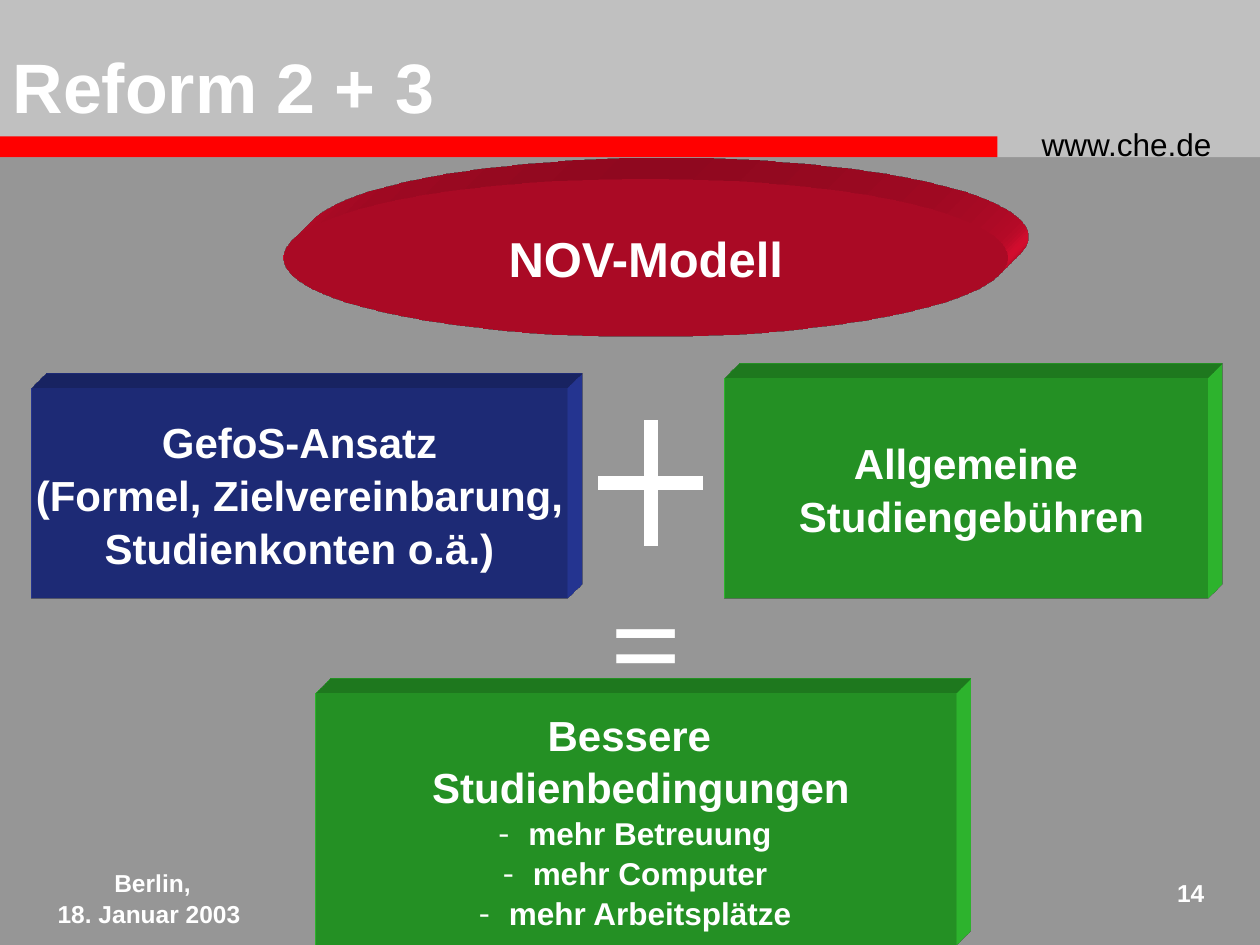
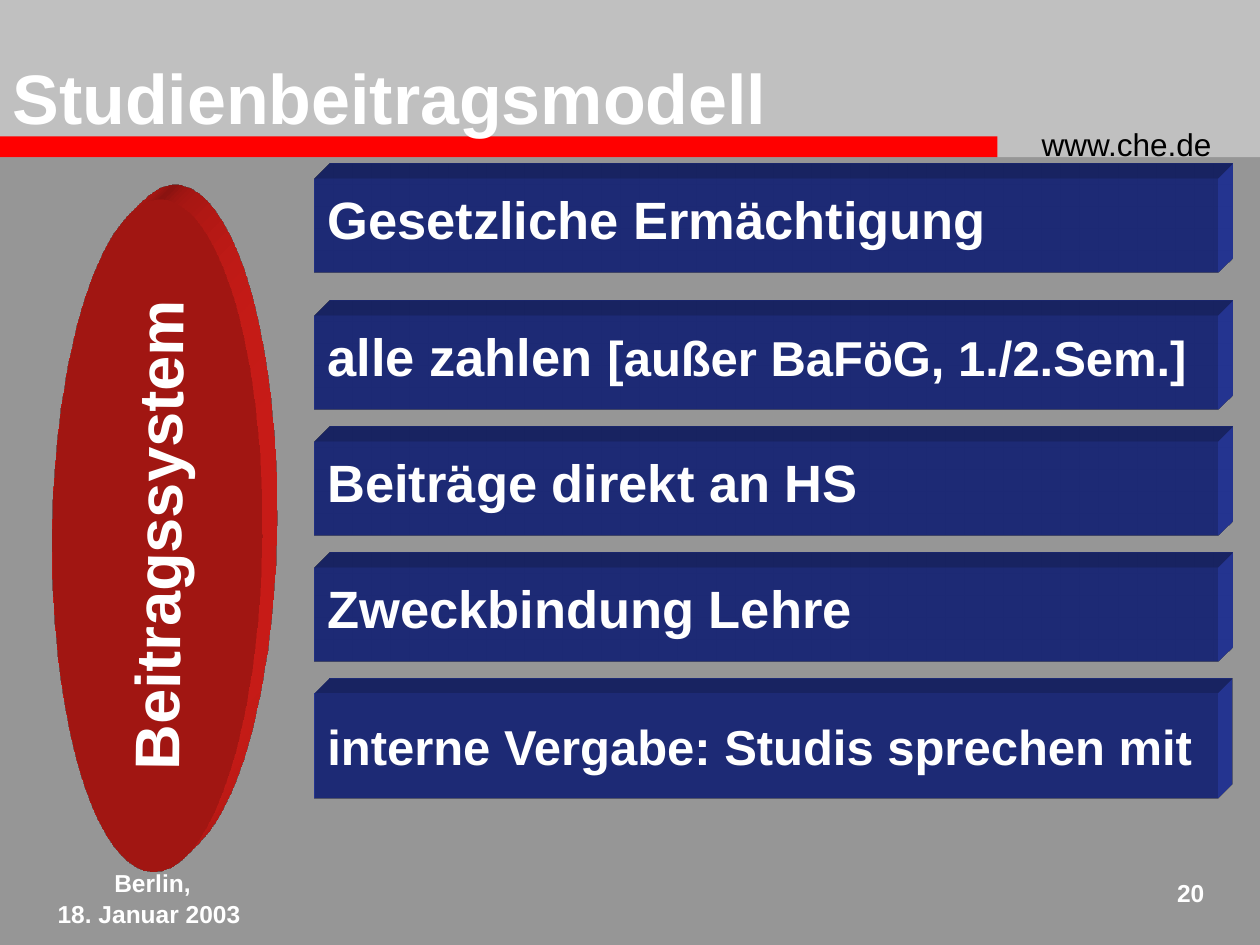
import pptx
import pptx.util
import pptx.dml.color
import pptx.enum.shapes
import pptx.enum.text
import pptx.oxml
import pptx.oxml.ns

Cm, Pt = pptx.util.Cm, pptx.util.Pt
Shape = pptx.enum.shapes.MSO_SHAPE
Anchor = pptx.enum.text.MSO_ANCHOR
Align = pptx.enum.text.PP_ALIGN
AutoSize = pptx.enum.text.MSO_AUTO_SIZE

COLORS = {
    "page": "969696", "band": "C0C0C0", "stripe": "FF0000",
    "white": "FFFFFF", "black": "000000", "blue": "293BA5",
    "green": "33CC33", "crimson": "F00E34", "red": "E41F1A",
}
BOLD = {"name": "Arial", "bold": True, "color": "white"}
PLACE_AND_DATE = ["Berlin,", "18. Januar 2003 "]
SITE = "www.che.de"
LINE_GAP = 1.05
DEEP, SHALLOW = 430200, 304800

# Places are left, top, width, height in centimetres.
REFORM = {
    "title": "Reform 2 + 3", "title_place": (0, 0.76, 19.48, 1.96), "number": "14",
    "model": ("NOV-Modell", (5.72, 3.6, 14.6, 3.18)),
    "blocks": [
        (["GefoS-Ansatz", "(Formel, Zielvereinbarung,", "Studienkonten o.ä.)"],
         [], "blue", (0.64, 7.83, 10.8, 4.23)),
        (["Allgemeine", " Studiengebühren"],
         [], "green", (14.6, 7.62, 9.74, 4.45)),
        (["Bessere ", " Studienbedingungen"],
         ["mehr Betreuung", "mehr Computer", "mehr Arbeitsplätze"],
         "green", (6.35, 13.97, 12.91, 5.08)),
    ],
    "plus": {"center": (13.12, 9.74), "width": 2.12, "height": 2.54},
    "equals": ("=", (12.06, 11.22, 1.96, 3.3)),
}
CONTRIBUTION = {
    "title": "Studienbeitragsmodell", "title_place": (0, 0.97, 20.11, 1.96), "number": "20",
    "system": ("Beitragssystem", (1.04, 4.02, 4.24, 13.54)),
    # spans (text, size), top, height, line spacing
    "bars": [
        ([("Gesetzliche Ermächtigung", 30)], 3.6, 1.9, 0.75),
        ([("alle zahlen ", 30), ("[außer BaFöG, 1./2.Sem.]", 28)], 6.35, 1.9, 0.75),
        ([("Beiträge direkt an HS", 30)], 8.89, 1.9, 0.75),
        ([("Zweckbindung Lehre", 30)], 11.43, 1.9, 0.75),
        ([("interne Vergabe: Studis sprechen mit", 28)], 13.97, 2.12, 1.0),
    ],
    "bar_left": 6.35, "bar_width": 18.2,
}


def rgb(name):
    return pptx.dml.color.RGBColor.from_string(COLORS[name])


def lengths(place):
    return [Cm(value) for value in place]


def apply_font(font, **values):
    for key, value in values.items():
        if key == "color":
            font.color.rgb = rgb(value)
        elif key == "size":
            font.size = Pt(value)
        else:
            setattr(font, key, value)


def hyphen_bullet(para):
    properties = para._p.get_or_add_pPr()
    properties.set("marL", str(Cm(0.6)))
    properties.set("indent", str(-Cm(0.6)))
    for tag, key, value in [("a:buFont", "typeface", "Times New Roman"),
                            ("a:buChar", "char", "-")]:
        bullet = pptx.oxml.parse_xml(f"<{tag} {pptx.oxml.ns.nsdecls('a')}/>")
        bullet.set(key, value)
        properties.append(bullet)


def write(shape, lines, align=Align.LEFT, anchor=Anchor.TOP, wrap=True, spacing=1.0):
    """Fill a shape; each line is (spans, bulleted), each span (text, font values)."""
    frame = shape.text_frame
    settings = {"word_wrap": wrap, "vertical_anchor": anchor, "auto_size": AutoSize.NONE}
    for key, value in settings.items():
        setattr(frame, key, value)
    for index, (spans, bulleted) in enumerate(lines):
        para = frame.add_paragraph() if index else frame.paragraphs[0]
        if bulleted:
            hyphen_bullet(para)
        para.alignment = align
        para.line_spacing = spacing
        para.space_before = Pt(0)
        for text, values in spans:
            span = para.add_run()
            span.text = text
            apply_font(span.font, **values)


def plain(texts, size, **changes):
    return [([(text, {**BOLD, "size": size, **changes})], False) for text in texts]


def add_text(page, place, lines, **options):
    box = page.shapes.add_textbox(*lengths(place))
    write(box, lines, **options)


def add_flat(page, kind, place, color):
    shape = page.shapes.add_shape(kind, *lengths(place))
    shape.shadow.inherit = False
    shape.fill.solid()
    shape.fill.fore_color.rgb = rgb(color)
    shape.line.fill.background()
    return shape


def add_solid(page, kind, place, color, depth):
    """Add a shape extruded towards the top right."""
    shape = add_flat(page, kind, place, color)
    names = pptx.oxml.ns.nsdecls("a")
    scene = (f'<a:scene3d {names}><a:camera prst="legacyObliqueTopRight"/>'
             '<a:lightRig rig="legacyFlat3" dir="b"/></a:scene3d>')
    body = (f'<a:sp3d {names} extrusionH="{depth}" prstMaterial="legacyMatte">'
            '<a:bevelT w="13500" h="13500" prst="angle"/>'
            '<a:bevelB w="13500" h="13500" prst="angle"/>'
            f'<a:extrusionClr><a:srgbClr val="{COLORS[color]}"/></a:extrusionClr></a:sp3d>')
    for xml in (scene, body):
        shape._element.spPr.append(pptx.oxml.parse_xml(xml))
    return shape


def add_line(page, left, top, right, bottom):
    line = page.shapes.add_connector(pptx.enum.shapes.MSO_CONNECTOR.STRAIGHT,
                                     *lengths((left, top, right, bottom)))
    line.line.color.rgb = rgb("white")
    line.line.width = Pt(8)
    line._element.spPr.append(
        pptx.oxml.parse_xml(f"<a:effectLst {pptx.oxml.ns.nsdecls('a')}/>"))


def add_page(deck, content):
    """Add a slide with the shared bands, title and footer."""
    page = deck.slides.add_slide(deck.slide_layouts[5])
    add_flat(page, Shape.RECTANGLE, (0, 0, 25.4, 3.17), "band")
    add_flat(page, Shape.RECTANGLE, (-0.02, 2.75, 20.13, 0.42), "stripe")
    add_text(page, (20.75, 2.39, 4.45, 1.02),
             plain([SITE], 18, bold=False, color="black"))
    add_text(page, (0, 17.35, 6.15, 1.27), plain(PLACE_AND_DATE, 14),
             align=Align.CENTER, spacing=LINE_GAP)
    add_text(page, (23.06, 17.58, 1.47, 1.07), plain([content["number"]], 14),
             align=Align.RIGHT)
    title = page.shapes.title
    places = zip(("left", "top", "width", "height"), lengths(content["title_place"]))
    for key, value in places:
        setattr(title, key, value)
    write(title, plain([content["title"]], 40))
    page.shapes._spTree.append(title._element)
    return page


def build_reform(deck):
    page = add_page(deck, REFORM)
    centered = {"align": Align.CENTER, "anchor": Anchor.MIDDLE, "wrap": False}
    text, place = REFORM["model"]
    model = add_solid(page, Shape.OVAL, place, "crimson", DEEP)
    write(model, plain([text], 28), **centered)
    for heading, points, color, place in REFORM["blocks"]:
        block = add_solid(page, Shape.RECTANGLE, place, color, SHALLOW)
        bullets = [(spans, True) for spans, _ in plain(points, 18)]
        write(block, plain(heading, 24) + bullets, spacing=LINE_GAP, **centered)
    plus = REFORM["plus"]
    x, y = plus["center"]
    half_width, half_height = plus["width"] / 2, plus["height"] / 2
    add_line(page, x - half_width, y, x + half_width, y)
    add_line(page, x, y - half_height, x, y + half_height)
    text, place = REFORM["equals"]
    add_text(page, place, plain([text], 72, name="Times New Roman"), wrap=False)


def build_contribution(deck):
    page = add_page(deck, CONTRIBUTION)
    text, place = CONTRIBUTION["system"]
    system = add_solid(page, Shape.OVAL, place, "red", SHALLOW)
    system.rotation = 0.6
    write(system, plain([text], 36), align=Align.CENTER, anchor=Anchor.MIDDLE, wrap=False)
    system.text_frame._txBody.bodyPr.set("vert", "vert270")
    for spans, top, height, spacing in CONTRIBUTION["bars"]:
        place = (CONTRIBUTION["bar_left"], top, CONTRIBUTION["bar_width"], height)
        bar = add_solid(page, Shape.RECTANGLE, place, "blue", SHALLOW)
        styled = [(text, {**BOLD, "size": size}) for text, size in spans]
        write(bar, [(styled, False)], anchor=Anchor.MIDDLE, wrap=False, spacing=spacing)


def main():
    deck = pptx.Presentation()
    deck.slide_width, deck.slide_height = Cm(25.4), Cm(19.05)
    background = deck.slide_master.background.fill
    background.solid()
    background.fore_color.rgb = rgb("page")
    build_reform(deck)
    build_contribution(deck)
    deck.save("out.pptx")


if __name__ == "__main__":
    main()
